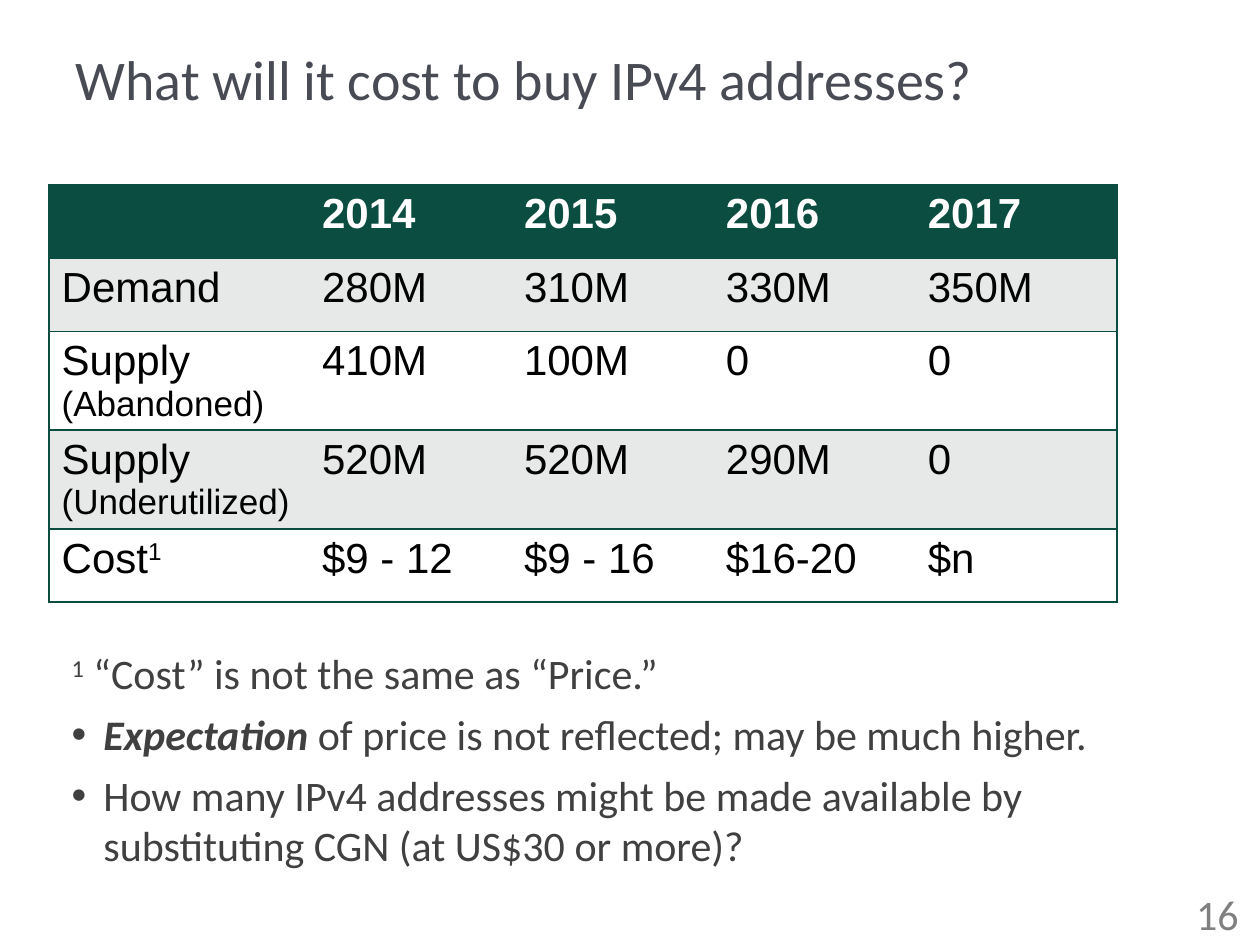
from lxml.etree import SubElement
from pptx import Presentation
from pptx.dml.color import RGBColor
from pptx.enum.text import MSO_ANCHOR, MSO_AUTO_SIZE, PP_ALIGN
from pptx.oxml.ns import qn
from pptx.util import Cm, Pt

GREEN = RGBColor(0x0B, 0x4D, 0x40)
BAND = RGBColor(0xE7, 0xE9, 0xE8)
WHITE = RGBColor(0xFF, 0xFF, 0xFF)
BLACK = RGBColor(0x00, 0x00, 0x00)
TITLE = RGBColor(0x48, 0x4B, 0x54)
BODY = RGBColor(0x40, 0x40, 0x40)
GREY = RGBColor(0x80, 0x80, 0x80)

# Each cell is a list of paragraphs, each paragraph a list of (text, options) runs.
ROW_HEADS = [
    [[("", {})]],
    [[("Demand", {})]],
    [[("Supply ", {}), ("(Abandoned)", {"size": 20})]],
    [[("Supply", {})], [("(Underutilized)", {"size": 20})]],
    [[("Cost", {}), ("1", {"raised": True})]],
]
VALUES = [
    ["2014", "2015", "2016", "2017"],
    ["280M", "310M", "330M", "350M"],
    ["410M", "100M", "0", "0"],
    ["520M", "520M", "290M", "0"],
    ["$9 - 12", "$9 - 16", "$16-20", "$n"],
]
NOTES = [
    (False, [("1", {"raised": True}), (" “Cost” is not the same as “Price.”", {})]),
    (True, [("Expectation ", {"bold": True, "italic": True}),
            ("of price is not reflected; may be much higher.", {})]),
    (True, [("How many IPv4 addresses might be made available by "
             "substituting CGN (at US$30 or more)?", {})]),
]


class SlideBuilder:
    def __init__(self, s, text_font="Calibri", table_font="Arial"):
        self.s = s
        self.text_font = text_font
        self.table_font = table_font

    def place(self, sp, left, top, width, height):
        sp.left, sp.top, sp.width, sp.height = map(Cm, (left, top, width, height))
        tf = sp.text_frame
        tf.word_wrap = True
        tf.auto_size = MSO_AUTO_SIZE.NONE
        return tf

    def run(self, p, text, font, color, size=24, bold=False, italic=False, raised=False):
        r = p.add_run()
        r.text = text
        f = r.font
        f.name, f.size, f.bold, f.italic = font, Pt(size), bold, italic
        f.color.rgb = color
        if raised:
            r._r.get_or_add_rPr().set("baseline", "30000")

    def title(self, text, *box):
        tf = self.place(self.s.shapes.title, *box)
        tf.vertical_anchor = MSO_ANCHOR.TOP
        p = tf.paragraphs[0]
        p.alignment = PP_ALIGN.LEFT
        self.run(p, text, self.text_font, TITLE, size=32)

    def notes(self, items, *box):
        tf = self.place(self.s.placeholders[1], *box)
        for i, (bulleted, runs) in enumerate(items):
            p = tf.paragraphs[0] if i == 0 else tf.add_paragraph()
            pPr = p._p.get_or_add_pPr()
            indent = Cm(0.64) if bulleted else 0
            pPr.set("marL", str(indent))
            pPr.set("indent", str(-indent))
            if bulleted:
                SubElement(pPr, qn("a:buFont"), typeface="Arial")
                SubElement(pPr, qn("a:buChar"), char="•")
            else:
                SubElement(pPr, qn("a:buNone"))
            p.space_before = Pt(6 if i else 0)
            for text, options in runs:
                self.run(p, text, self.text_font, BODY, **options)

    def page_number(self, text, *box):
        tf = self.place(self.s.shapes.add_textbox(0, 0, 0, 0), *box)
        tf.vertical_anchor = MSO_ANCHOR.MIDDLE
        p = tf.paragraphs[0]
        p.alignment = PP_ALIGN.RIGHT
        self.run(p, text, self.text_font, GREY)

    def borders(self, cell, sides):
        """Draw the named sides in green and clear the others."""
        tcPr = cell._tc.get_or_add_tcPr()
        for side in "LRTB":
            ln = SubElement(tcPr, qn(f"a:ln{side}"), w=str(Pt(1)))
            if side in sides:
                fill = SubElement(ln, qn("a:solidFill"))
                SubElement(fill, qn("a:srgbClr"), val=str(GREEN))
            else:
                SubElement(ln, qn("a:noFill"))

    def table(self, rows, left, top, col_widths, row_heights):
        frame = self.s.shapes.add_table(
            len(rows), len(col_widths), Cm(left), Cm(top),
            Cm(sum(col_widths)), Cm(sum(row_heights)))
        tbl = frame.table
        for col, width in zip(tbl.columns, col_widths):
            col.width = Cm(width)
        for row, height in zip(tbl.rows, row_heights):
            row.height = Cm(height)
        last = len(col_widths) - 1
        for i, row in enumerate(rows):
            fill = GREEN if i == 0 else BAND if i % 2 else WHITE
            for j, paragraphs in enumerate(row):
                cell = tbl.cell(i, j)
                self.borders(cell, "TB" + ("L" if j == 0 else "R" if j == last else ""))
                cell.fill.solid()
                cell.fill.fore_color.rgb = fill
                self.fill_cell(cell, paragraphs, header=i == 0)

    def fill_cell(self, cell, paragraphs, header):
        tf = cell.text_frame
        for k, runs in enumerate(paragraphs):
            p = tf.paragraphs[0] if k == 0 else tf.add_paragraph()
            for text, options in runs:
                if text:
                    self.run(p, text, self.table_font, WHITE if header else BLACK,
                             bold=header, **options)


def main():
    prs = Presentation()
    prs.slide_width, prs.slide_height = Cm(25.4), Cm(19.05)
    slide = SlideBuilder(prs.slides.add_slide(prs.slide_layouts[1]))
    slide.title("What will it cost to buy IPv4 addresses?", 1.27, 0.76, 20.98, 3.18)
    rows = [[head] + [[[(value, {})]] for value in values]
            for head, values in zip(ROW_HEADS, VALUES)]
    slide.table(rows, 0.99, 3.72, [5.25] + [4.07] * 4, [1.48, 1.48, 1.99, 1.99, 1.48])
    slide.page_number("16", 19.3, 17.91, 5.92, 1.02)
    slide.notes(NOTES, 1.19, 12.93, 22.86, 5.79)
    prs.save("out.pptx")


if __name__ == "__main__":
    main()
